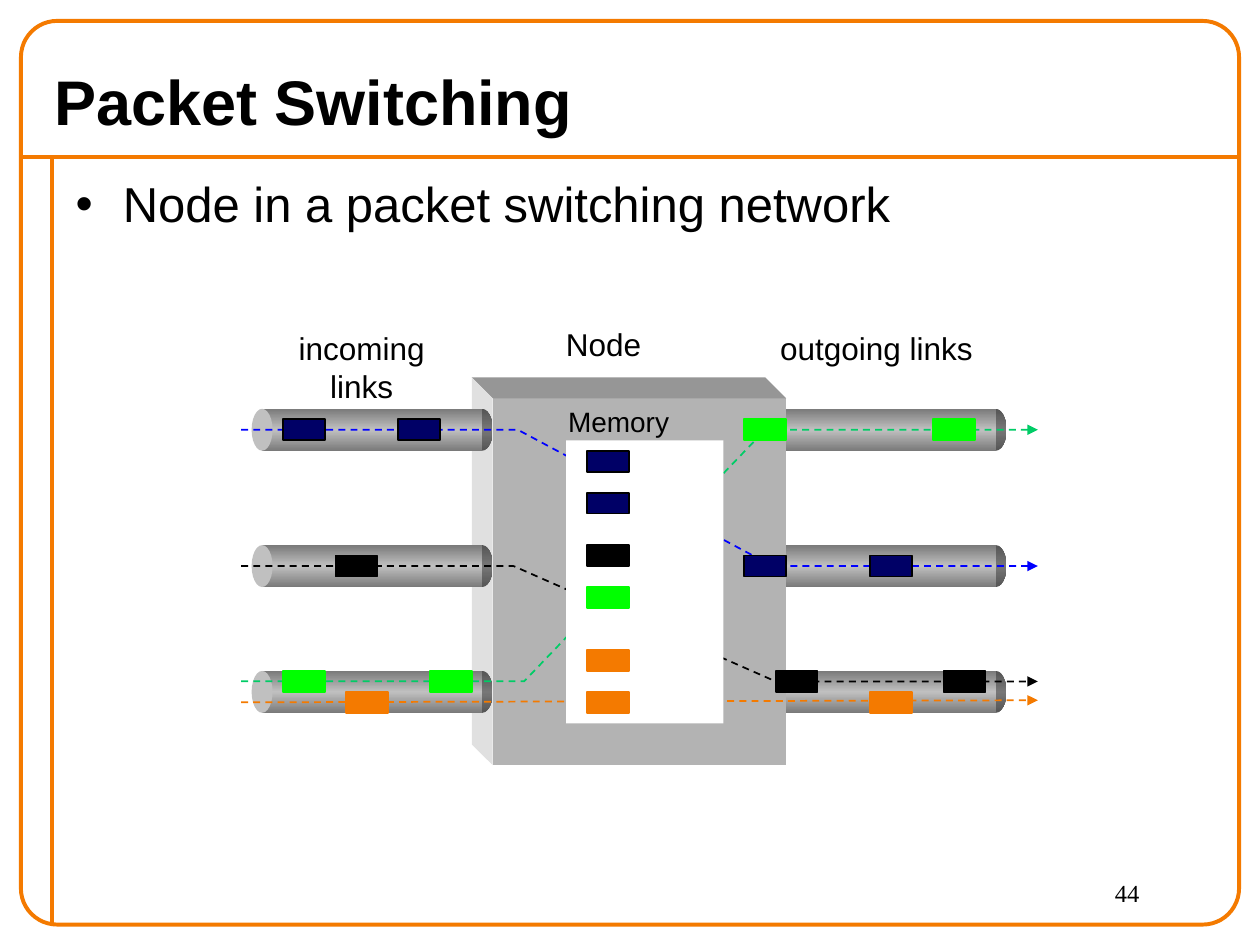
from copy import deepcopy

from lxml.etree import SubElement
from pptx import Presentation
from pptx.dml.color import RGBColor
from pptx.enum.dml import MSO_LINE
from pptx.enum.shapes import MSO_CONNECTOR, MSO_SHAPE
from pptx.enum.text import MSO_ANCHOR, MSO_AUTO_SIZE, PP_ALIGN
from pptx.oxml.ns import qn
from pptx.util import Inches, Pt

CELL = 0.0832
ORANGE, GREEN, NAVY, BLACK, WHITE = "F47A00", "00FF00", "000066", "000000", "FFFFFF"
LINK_ROWS = (39, 52, 64)
PACKETS = {
    NAVY: [(27, 40), (38, 40), (56, 43), (56, 47), (71, 53), (83, 53)],
    BLACK: [(32, 53), (56, 52), (74, 64), (90, 64)],
    GREEN: [(27, 64), (41, 64), (56, 56), (71, 40), (89, 40)],
    ORANGE: [(33, 66), (56, 66), (56, 62), (83, 66)],
}
ROUTES = [
    ("00CC66", [(23, 65), (50, 65), (73, 41), (99, 41)]),
    ("0000FF", [(23, 41), (49.4, 41), (73.7, 54), (99, 54)]),
    (BLACK, [(23, 54), (49, 54), (74, 65), (99, 65)]),
]
NODE_FACES = [
    ("B3B3B3", [(47, 38), (75, 38), (75, 73), (47, 73)]),
    ("969696", [(45, 36), (73, 36), (75, 38), (47, 38)]),
    ("E0E0E0", [(45, 36), (47, 38), (47, 73), (45, 71)]),
]


def grid(*cells):
    """Turn grid cells into lengths."""
    return [Inches(cell * CELL) for cell in cells]


def color(hex_string):
    """Turn a hex string into a colour."""
    return RGBColor.from_string(hex_string)


def style(shape, fill=None, line=None, width=1):
    """Give a shape a flat fill and outline without a shadow."""
    shape.shadow.inherit = False
    if fill:
        shape.fill.solid()
        shape.fill.fore_color.rgb = color(fill)
    else:
        shape.fill.background()
    if line:
        shape.line.color.rgb = color(line)
        shape.line.width = Pt(width)
    else:
        shape.line.fill.background()


def add_box(shapes, kind, cells, **look):
    """Add a preset shape on the grid."""
    shape = shapes.add_shape(kind, *grid(*cells))
    style(shape, **look)
    return shape


def shade(shape, edge, middle):
    """Fill a shape with a vertical edge-middle-edge gradient."""
    shape.fill.gradient()
    shape.fill.gradient_angle = 90
    for stop, hex_string, position in zip(shape.fill.gradient_stops, (edge, middle), (0, 0.5)):
        stop.color.rgb = color(hex_string)
        stop.position = position
    stop_list = shape._element.spPr.find(qn("a:gradFill")).find(qn("a:gsLst"))
    last = deepcopy(stop_list[0])
    last.set("pos", "100000")
    stop_list.append(last)


def add_link(shapes, column, row):
    """Add a pipe made of a dark end, a body and a light end."""
    group = shapes.add_group_shape().shapes
    shade(add_box(group, MSO_SHAPE.OVAL, (column + 21, row, 2, 4)), "555555", "777777")
    shade(add_box(group, MSO_SHAPE.RECTANGLE, (column + 1, row, 21, 4)), "7A7A7A", "C0C0C0")
    add_box(group, MSO_SHAPE.OVAL, (column, row, 2, 4), fill="C0C0C0")


def add_outline(shapes, points, closed, **look):
    """Add a freeform through grid points."""
    start, *rest = [grid(*point) for point in points]
    builder = shapes.build_freeform(*start, scale=1.0)
    builder.add_line_segments(rest, close=closed)
    shape = builder.convert_to_shape()
    style(shape, **look)
    return shape


def add_line(shapes, start, end, hex_string, width):
    """Add a straight connector without a shadow."""
    line = shapes.add_connector(MSO_CONNECTOR.STRAIGHT, *grid(*start, *end))
    line.line.color.rgb = color(hex_string)
    line.line.width = Pt(width)
    SubElement(line._element.spPr, qn("a:effectLst"))
    return line


def make_route(shape):
    """Dash a line and end it with an arrowhead."""
    shape.line.dash_style = MSO_LINE.DASH
    SubElement(shape._element.spPr.find(qn("a:ln")), qn("a:tailEnd"), type="triangle")


def write(shape, text, size, font="Arial", align=PP_ALIGN.LEFT, bold=False):
    """Put one formatted paragraph into a shape."""
    shape.text_frame.text = text
    paragraph = shape.text_frame.paragraphs[0]
    paragraph.alignment = align
    run_font = paragraph.runs[0].font
    run_font.name, run_font.size, run_font.bold = font, Pt(size), bold
    run_font.color.rgb = color(BLACK)


def add_label(shapes, text, place, size=18, wrap=False, inset=0):
    """Add a centred label at a place in inches."""
    label = shapes.add_textbox(*map(Inches, place))
    frame = label.text_frame
    frame.word_wrap = wrap
    frame.margin_left = frame.margin_right = Inches(inset)
    frame.margin_top = frame.margin_bottom = Inches(inset / 2)
    write(label, text, size, align=PP_ALIGN.CENTER)


def fill_placeholder(shape, place, text, size, anchor, bold=False):
    """Move a placeholder and write its text."""
    shape.left, shape.top, shape.width, shape.height = map(Inches, place)
    shape.text_frame.auto_size = MSO_AUTO_SIZE.NONE
    shape.text_frame.vertical_anchor = anchor
    write(shape, text, size, bold=bold)


def add_frame(shapes):
    """Add the slide's border, rules and number."""
    add_line(shapes, (2, 15), (118.2, 15), ORANGE, 2.25)
    add_line(shapes, (5, 15), (5, 88.1), ORANGE, 2.25)
    border = add_box(shapes, MSO_SHAPE.ROUNDED_RECTANGLE, (2, 2, 116.2, 86.2), line=ORANGE, width=2.25)
    border.adjustments[0] = 0.04
    number = shapes.add_textbox(*map(Inches, (8.75, 6.92, 1, 0.42)))
    write(number, "44", 14, font="Times New Roman")


def add_diagram(shapes):
    """Add the node with its links, routes and packets."""
    for row in LINK_ROWS:
        add_link(shapes, 73, row)
    for fill, points in NODE_FACES:
        add_outline(shapes, points, True, fill=fill)
    for row in LINK_ROWS:
        add_link(shapes, 24, row)
    make_route(add_line(shapes, (23, 67), (99, 66.8), ORANGE, 1))
    for line, points in ROUTES:
        make_route(add_outline(shapes, points, False, line=line))
    add_box(shapes, MSO_SHAPE.RECTANGLE, (54, 42, 15, 27), fill=WHITE)
    for fill, places in PACKETS.items():
        for place in places:
            line = BLACK if fill == NAVY else fill
            add_box(shapes, MSO_SHAPE.RECTANGLE, (*place, 4, 2), fill=fill, line=line)


def main():
    """Build and save the slide."""
    presentation = Presentation()
    presentation.slide_width, presentation.slide_height = Inches(10), Inches(7.5)
    slide = presentation.slides.add_slide(presentation.slide_layouts[1])
    shapes = slide.shapes
    title, body = slide.placeholders
    fill_placeholder(title, (0.33, 0.42, 9.67, 0.75), "Packet Switching", 36, MSO_ANCHOR.MIDDLE, True)
    fill_placeholder(body, (0.5, 1.33, 9.25, 0.64), "Node in a packet switching network", 28, MSO_ANCHOR.TOP)
    add_frame(shapes)
    add_diagram(shapes)
    add_label(shapes, "incoming links", (2.17, 2.61, 1.4, 0.6), wrap=True)
    add_label(shapes, "outgoing links", (6.19, 2.61, 1.53, 0.3))
    add_label(shapes, "Node", (4.49, 2.58, 0.6, 0.3))
    add_label(shapes, "Memory", (4.41, 3.16, 1, 0.36), size=16, inset=0.1)
    presentation.save("out.pptx")


if __name__ == "__main__":
    main()
